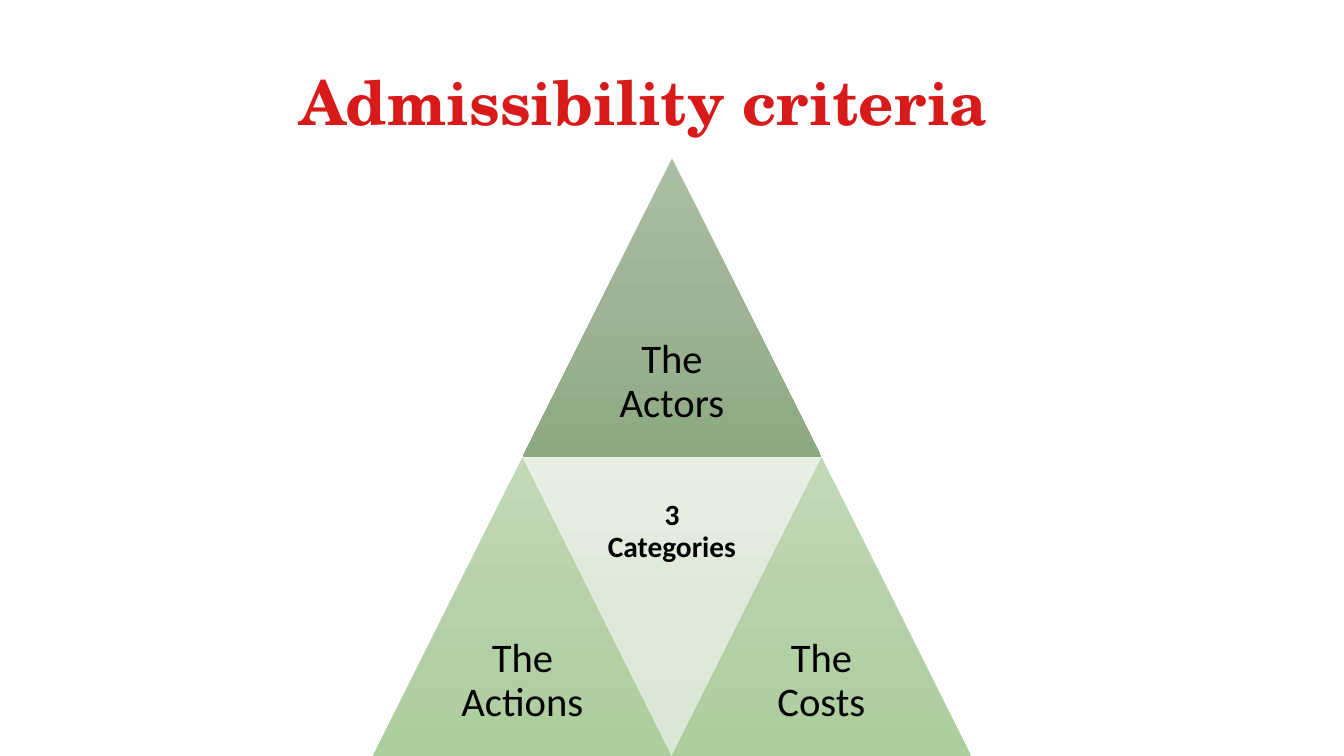
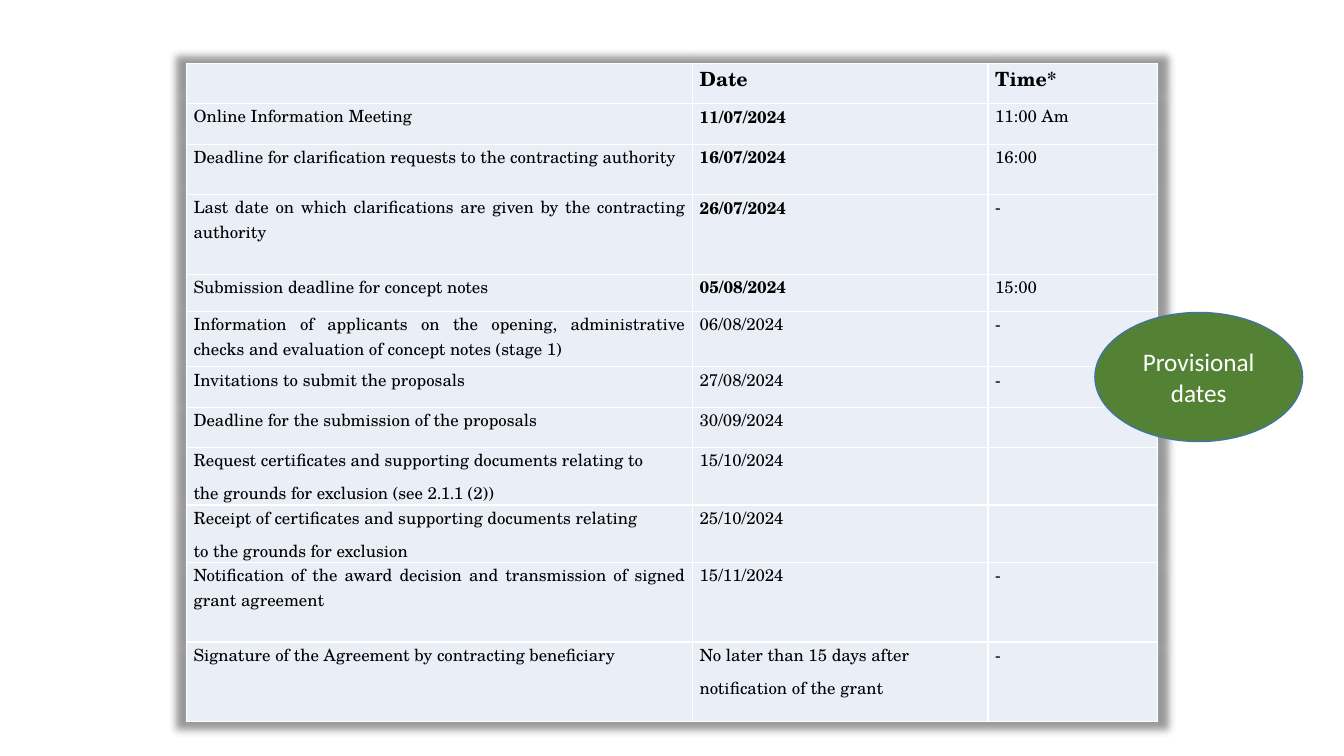
from lxml import etree
from pptx import Presentation
from pptx.dml.color import RGBColor
from pptx.enum.shapes import MSO_SHAPE
from pptx.enum.text import MSO_ANCHOR, PP_ALIGN
from pptx.oxml import parse_xml
from pptx.oxml.ns import nsdecls, qn
from pptx.util import Inches, Pt

TRIANGLE, OVAL = MSO_SHAPE.ISOSCELES_TRIANGLE, MSO_SHAPE.OVAL
CENTER, JUSTIFY = PP_ALIGN.CENTER, PP_ALIGN.JUSTIFY
MIDDLE = MSO_ANCHOR.MIDDLE

SERIF, SANS = "TeX Gyre Schola", "Calibri"
RED = RGBColor(0xD8, 0x1A, 0x1A)
BLACK = RGBColor(0, 0, 0)
WHITE = RGBColor(0xFF, 0xFF, 0xFF)
GREEN = RGBColor(0x54, 0x82, 0x35)
BLUE = RGBColor(0x43, 0x73, 0x9E)
PALE_BLUE = RGBColor(0xEA, 0xEF, 0xF7)
DARK_SHADES = "AABEA2", "9EB395", "8DA982"
MEDIUM_SHADES = "C2D9B7", "B7D1AA", "ACCD9C"
LIGHT_SHADES = "E8EFE5", "DEE9D9", "DAE7D4"

# Pyramid: label, column and row in half-triangle and triangle steps, shades, inverted
PYRAMID_LEFT, PYRAMID_TOP, SIDE = 3.70, 1.57, 2.965
PYRAMID = [
    ("The Actors", 1, 0, DARK_SHADES, False),
    ("The Actions", 0, 1, MEDIUM_SHADES, False),
    ("3 Categories", 1, 1, LIGHT_SHADES, True),
    ("The Costs", 2, 1, MEDIUM_SHADES, False),
]

# Calendar: row height, steps (one entry per paragraph), date, time
COLUMN_WIDTHS = 5.02, 2.93, 1.68
CALENDAR = [
    (0.40, [], ["Date"], ["Time*"]),
    (0.40, ["Online Information Meeting"], ["11/07/2024"], ["11:00 Am"]),
    (0.50, ["Deadline for clarification requests to the contracting authority"],
     ["16/07/2024"], ["16:00"]),
    (0.79, ["Last date on which clarifications are given by the contracting authority"],
     ["26/07/2024"], ["-"]),
    (0.37, ["Submission deadline for concept notes"], ["05/08/2024"], ["15:00"]),
    (0.55, ["Information of applicants on the opening, administrative checks "
            "and evaluation of concept notes (stage 1)"], ["06/08/2024"], ["-"]),
    (0.40, ["Invitations to submit the proposals"], ["27/08/2024"], ["-"]),
    (0.40, ["Deadline for the submission of the proposals"], ["30/09/2024"], []),
    (0.57, ["Request certificates and supporting documents relating to",
            "the grounds for exclusion (see 2.1.1 (2))"], ["15/10/2024"], []),
    (0.57, ["Receipt of certificates and supporting documents relating",
            "to the grounds for exclusion"], ["25/10/2024"], []),
    (0.79, ["Notification of the award decision and transmission of signed grant agreement"],
     ["15/11/2024"], ["-"]),
    (0.79, ["Signature of the Agreement by contracting beneficiary"],
     ["No later than 15 days after", "notification of the grant"], ["-"]),
]
LAST_BOLD_DATE_ROW = 4


def write(frame, paragraphs, size, color, font, bold=False, align=CENTER, line_spacing=None):
    frame.word_wrap = True
    for index, text in enumerate(paragraphs):
        paragraph = frame.add_paragraph() if index else frame.paragraphs[0]
        paragraph.alignment = align
        if line_spacing:
            paragraph.line_spacing = line_spacing
        if index:
            paragraph.space_before = Pt(6)
        run = paragraph.add_run()
        run.text = text
        run.font.size, run.font.name, run.font.bold = Pt(size), font, bold
        run.font.color.rgb = color


def add_text(slide, box, text, size, color, font, bold=False, inset=0.1):
    frame = slide.shapes.add_textbox(*map(Inches, box)).text_frame
    frame.vertical_anchor = MIDDLE
    frame.margin_left = frame.margin_right = Inches(inset)
    frame.margin_top = frame.margin_bottom = Inches(inset)
    write(frame, [text], size, color, font, bold, line_spacing=0.9)


def add_shape(slide, kind, box):
    shape = slide.shapes.add_shape(kind, *map(Inches, box))
    shape.shadow.inherit = False
    return shape


def shade_downwards(shape, shades):
    """Fill with three colours from top to bottom, whatever the shape's rotation."""
    stops = "".join(f'<a:gs pos="{index * 50000}"><a:srgbClr val="{shade}"/></a:gs>'
                    for index, shade in enumerate(shades))
    gradient = parse_xml(f'<a:gradFill {nsdecls("a")} rotWithShape="0"><a:gsLst>{stops}</a:gsLst>'
                         '<a:lin ang="5400000" scaled="0"/></a:gradFill>')
    shape._element.spPr.find(qn("a:prstGeom")).addnext(gradient)


def add_pyramid(slide):
    half = SIDE / 2
    for label, column, row, shades, inverted in PYRAMID:
        left, top = PYRAMID_LEFT + column * half, PYRAMID_TOP + row * SIDE
        triangle = add_shape(slide, TRIANGLE, (left, top, SIDE, SIDE))
        triangle.rotation = 180 if inverted else 0
        triangle.line.fill.background()
        shade_downwards(triangle, shades)
        label_top = top if inverted else top + half
        add_text(slide, (left + half / 2, label_top, half, half), label,
                 21 if inverted else 29, BLACK, SANS, inverted, 0.09 if inverted else 0.12)


def outline_cell(cell):
    properties = cell._tc.get_or_add_tcPr()
    for index, side in enumerate("LRTB"):
        properties.insert(index, parse_xml(
            f'<a:ln{side} {nsdecls("a")} w="12700"><a:solidFill>'
            f'<a:srgbClr val="{WHITE}"/></a:solidFill></a:ln{side}>'))


def add_table_shadow(table):
    effects = etree.Element(qn("a:effectLst"))
    shadow = etree.SubElement(effects, qn("a:outerShdw"), blurRad="63500",
                              sx="102000", sy="102000", algn="ctr", rotWithShape="0")
    color = etree.SubElement(shadow, qn("a:prstClr"), val="black")
    etree.SubElement(color, qn("a:alpha"), val="40000")
    table._tbl.tblPr.insert(0, effects)


def add_calendar(slide):
    heights = [row[0] for row in CALENDAR]
    box = 1.85, 0.63, sum(COLUMN_WIDTHS), sum(heights)
    table = slide.shapes.add_table(len(CALENDAR), len(COLUMN_WIDTHS), *map(Inches, box)).table
    table.horz_banding = False
    add_table_shadow(table)
    for column, width in zip(table.columns, COLUMN_WIDTHS):
        column.width = Inches(width)
    for row_index, (height, *texts) in enumerate(CALENDAR):
        table.rows[row_index].height = Inches(height)
        for column_index, paragraphs in enumerate(texts):
            cell = table.cell(row_index, column_index)
            cell.margin_left = cell.margin_right = Inches(0.07)
            cell.margin_top = cell.margin_bottom = 0
            cell.fill.solid()
            cell.fill.fore_color.rgb = PALE_BLUE
            outline_cell(cell)
            header = row_index == 0
            bold = header or (column_index == 1 and row_index <= LAST_BOLD_DATE_ROW)
            write(cell.text_frame, paragraphs, 14 if header else 12, BLACK, SERIF, bold, JUSTIFY)


def add_badge(slide, text):
    badge = add_shape(slide, OVAL, (10.86, 3.10, 2.06, 1.28))
    badge.fill.solid()
    badge.fill.fore_color.rgb = GREEN
    badge.line.color.rgb = BLUE
    badge.line.width = Pt(1)
    badge.text_frame.vertical_anchor = MIDDLE
    write(badge.text_frame, [text], 18, WHITE, SANS)


def main():
    presentation = Presentation()
    presentation.slide_width, presentation.slide_height = Inches(13.33), Inches(7.5)
    blank = presentation.slide_layouts[6]

    criteria_slide = presentation.slides.add_slide(blank)
    add_text(criteria_slide, (1.66, 0.32, 9.45, 1.45), "Admissibility criteria", 44, RED, SERIF, True)
    add_pyramid(criteria_slide)

    calendar_slide = presentation.slides.add_slide(blank)
    add_calendar(calendar_slide)
    add_badge(calendar_slide, "Provisional dates")

    presentation.save("out.pptx")


if __name__ == "__main__":
    main()
